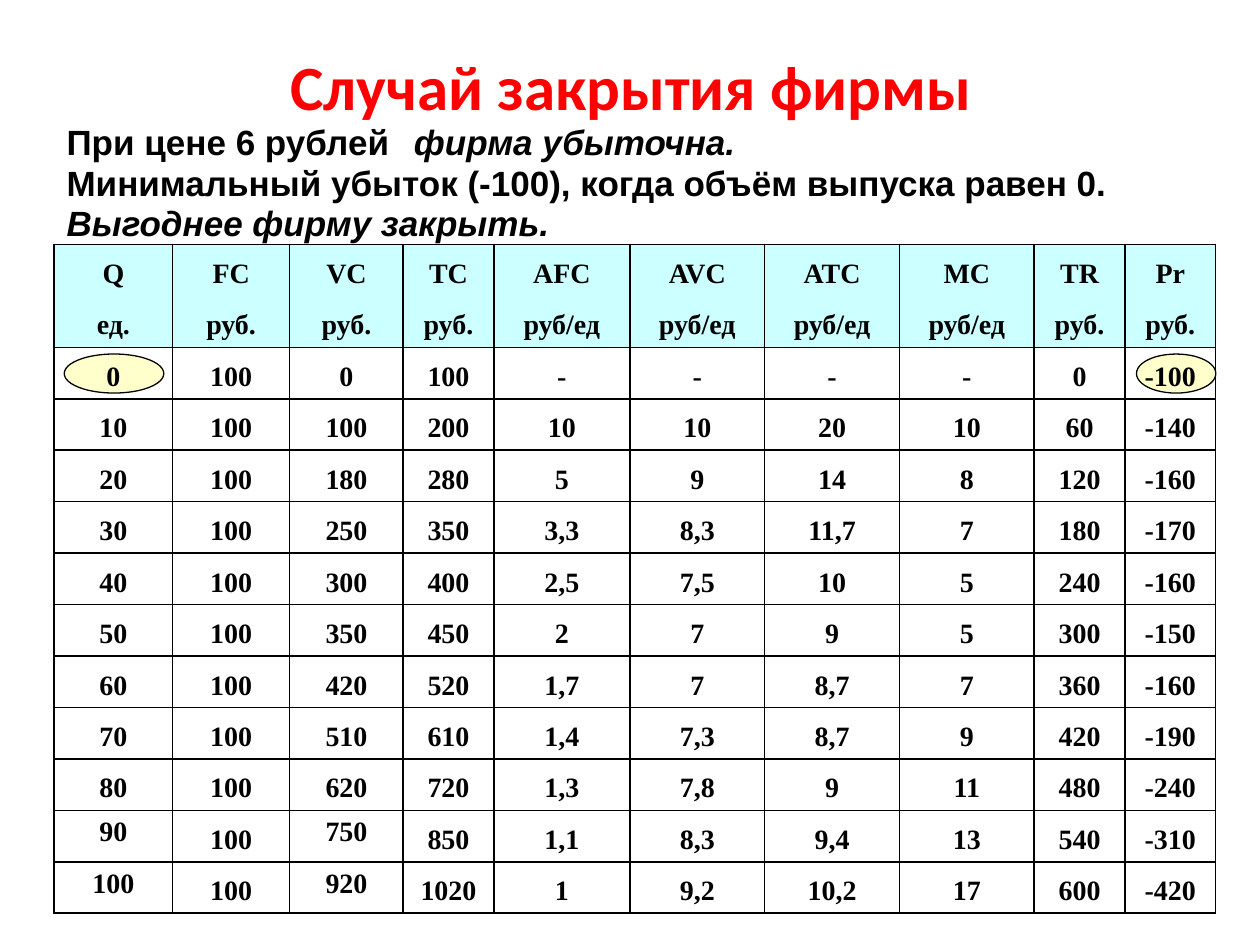
from dataclasses import dataclass

from lxml import etree
from pptx import Presentation
from pptx.dml.color import RGBColor
from pptx.enum.shapes import MSO_SHAPE
from pptx.enum.text import MSO_ANCHOR, PP_ALIGN
from pptx.oxml.ns import qn
from pptx.util import Inches, Pt

BLACK = RGBColor(0x00, 0x00, 0x00)
RED = RGBColor(0xFF, 0x00, 0x00)
HEADER_BLUE = RGBColor(0xCC, 0xFF, 0xFF)
MARK_YELLOW = RGBColor(0xFF, 0xFF, 0xCC)
CENTER = PP_ALIGN.CENTER
TOP, MIDDLE, BOTTOM = MSO_ANCHOR.TOP, MSO_ANCHOR.MIDDLE, MSO_ANCHOR.BOTTOM
OVAL = MSO_SHAPE.OVAL

TITLE_FONT = {"name": "Calibri", "size": Pt(36), "bold": True}
NOTE_FONT = {"name": "Arial", "size": Pt(20), "bold": True}
CELL_FONT = {"name": "Times New Roman", "size": Pt(16), "bold": True}

COLUMN_WIDTHS = [0.94, 0.93, 0.9, 0.72, 1.08, 1.07, 1.07, 1.07, 0.72, 0.72]
TABLE_LEFT, TABLE_TOP, TABLE_HEIGHT = 0.43, 1.94, 5.31
HEADER_ROWS = 2
ROWS = [line.split() for line in """\
Q FC VC TC AFC AVC ATC MC TR Pr
ед. руб. руб. руб. руб/ед руб/ед руб/ед руб/ед руб. руб.
0 100 0 100 - - - - 0 -100
10 100 100 200 10 10 20 10 60 -140
20 100 180 280 5 9 14 8 120 -160
30 100 250 350 3,3 8,3 11,7 7 180 -170
40 100 300 400 2,5 7,5 10 5 240 -160
50 100 350 450 2 7 9 5 300 -150
60 100 420 520 1,7 7 8,7 7 360 -160
70 100 510 610 1,4 7,3 8,7 9 420 -190
80 100 620 720 1,3 7,8 9 11 480 -240
90 100 750 850 1,1 8,3 9,4 13 540 -310
100 100 920 1020 1 9,2 10,2 17 600 -420""".splitlines()]
TOP_ALIGNED = {(r, c) for r in (11, 12) for c in (0, 2)}


@dataclass
class Mark:
    left: float
    width: float
    top: float = 2.81
    height: float = 0.31


@dataclass
class Note:
    left: float
    top: float
    width: float
    runs: list[tuple[str, bool]]  # text, italic
    height: float = 0.43


MARKS = [Mark(0.51, 0.79), Mark(9.02, 0.63)]
NOTES = [
    Note(0.43, 0.91, 3.07, [("При цене 6 рублей", False)]),
    Note(0.43, 1.23, 9.06, [("Минимальный убыток (-100), когда объём выпуска равен 0.", False)]),
    Note(0.43, 1.55, 9.06, [("Выгоднее фирму закрыть.", True)]),
    Note(3.11, 0.91, 3.7, [(" ", False), ("фирма убыточна.", True)]),
]


def add_run(p, text: str, font: dict, color: RGBColor = BLACK, italic: bool = False) -> None:
    r = p.add_run()
    r.text = text
    for name, value in font.items():
        setattr(r.font, name, value)
    r.font.italic = italic
    r.font.color.rgb = color


def add_title(s, text: str) -> None:
    sp = s.shapes.title
    sp.left, sp.top, sp.width, sp.height = map(Inches, (0.51, 0.28, 9, 0.79))
    sp.text_frame.vertical_anchor = MIDDLE
    p = sp.text_frame.paragraphs[0]
    p.alignment = CENTER
    add_run(p, text, TITLE_FONT, RED)


def add_mark(s, mark: Mark) -> None:
    sp = s.shapes.add_shape(OVAL, *map(Inches, (mark.left, mark.top, mark.width, mark.height)))
    sp.shadow.inherit = False
    sp.fill.solid()
    sp.fill.fore_color.rgb = MARK_YELLOW
    sp.line.color.rgb = BLACK
    sp.line.width = Pt(0.75)


def add_note(s, note: Note) -> None:
    sp = s.shapes.add_textbox(*map(Inches, (note.left, note.top, note.width, note.height)))
    tf = sp.text_frame
    tf.word_wrap = True
    tf.vertical_anchor = MIDDLE
    for text, italic in note.runs:
        add_run(tf.paragraphs[0], text, NOTE_FONT, italic=italic)


def set_borders(cell, hidden: str) -> None:
    """Draw the cell's sides in black, except the one named in hidden."""
    tc_pr = cell._tc.get_or_add_tcPr()
    for i, side in enumerate(("lnL", "lnR", "lnT", "lnB")):
        ln = etree.Element(qn(f"a:{side}"), w=str(Pt(1)))
        if side == hidden:
            etree.SubElement(ln, qn("a:noFill"))
        else:
            fill = etree.SubElement(ln, qn("a:solidFill"))
            etree.SubElement(fill, qn("a:srgbClr"), val=str(BLACK))
        tc_pr.insert(i, ln)


def add_cost_table(s) -> None:
    table = s.shapes.add_table(
        len(ROWS), len(COLUMN_WIDTHS), Inches(TABLE_LEFT), Inches(TABLE_TOP),
        Inches(sum(COLUMN_WIDTHS)), Inches(TABLE_HEIGHT)).table
    table.first_row = table.horz_banding = False
    for column, width in zip(table.columns, COLUMN_WIDTHS):
        column.width = Inches(width)
    for r, values in enumerate(ROWS):
        for c, text in enumerate(values):
            cell = table.cell(r, c)
            if r < HEADER_ROWS:
                cell.fill.solid()
                cell.fill.fore_color.rgb = HEADER_BLUE
            else:
                cell.fill.background()
            set_borders(cell, {0: "lnB", 1: "lnT"}.get(r, ""))
            cell.vertical_anchor = TOP if (r, c) in TOP_ALIGNED else BOTTOM
            p = cell.text_frame.paragraphs[0]
            p.alignment = CENTER
            add_run(p, text, CELL_FONT)


def main() -> None:
    prs = Presentation()
    prs.slide_width, prs.slide_height = Inches(10), Inches(7.5)
    s = prs.slides.add_slide(prs.slide_layouts[5])
    add_title(s, "Случай закрытия фирмы")
    for mark in MARKS:
        add_mark(s, mark)
    add_cost_table(s)
    for note in NOTES:
        add_note(s, note)
    prs.save("out.pptx")


if __name__ == "__main__":
    main()
